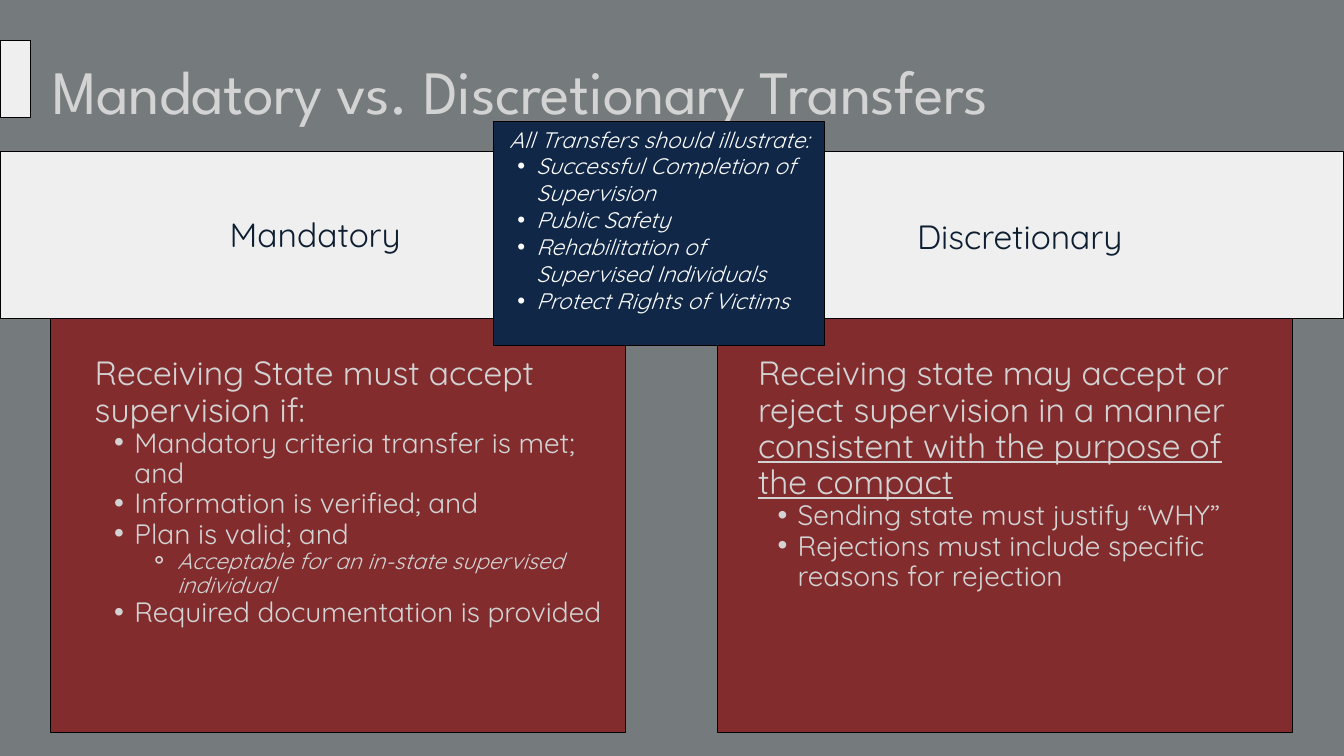
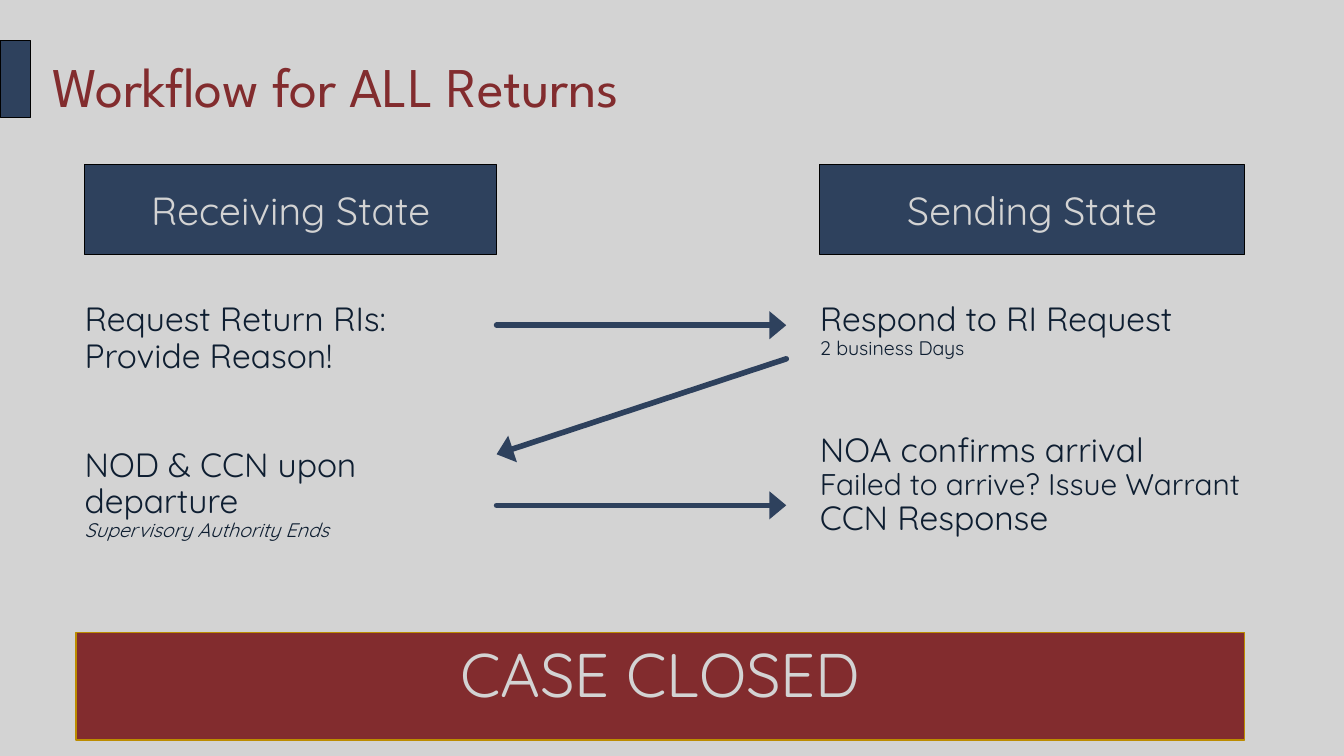
"""Build two slides on interstate transfers and the return workflow."""
from lxml.etree import SubElement
from pptx import Presentation
from pptx.dml.color import RGBColor as RGB
from pptx.enum.shapes import MSO_CONNECTOR as LINK, MSO_SHAPE as SHAPE
from pptx.enum.text import MSO_ANCHOR as ANCHOR, PP_ALIGN as ALIGN
from pptx.oxml.ns import qn
from pptx.util import Inches, Pt

COLOURS = {
    "slate": "757A7C", "silver": "D3D3D3", "mist": "EFEFEF", "brick": "822C2E",
    "navy": "102747", "steel": "2E415D", "ink": "0E1E31", "pale": "FCFCFB",
    "gold": "BC8C00", "black": "000000",
}
HEADING, BODY = "League Spartan", "Quicksand"
KINDS = {
    "title": {"size": 66, "leading": 71.3, "font": HEADING},
    "short title": {"size": 60, "leading": 64.8, "font": HEADING},
    "lead": {"size": 36, "leading": 38.9},
    "next lead": {"size": 36, "leading": 38.9, "gap": 77.8},
    "point": {"size": 30, "leading": 32.4, "level": 1, "indent": (0.59, -0.3), "bullet": "•"},
    "detail": {"size": 24, "leading": 25.9, "level": 2, "indent": (1.23, -0.41),
               "bullet": "⚬", "italic": True},
    "left band": {"size": 36, "leading": 43.2, "centred": True},
    "right band": {"size": 36, "leading": 38.9, "centred": True, "level": 1, "indent": (0.36, 0)},
    "goals": {"size": 24, "leading": 28.8, "centred": True, "italic": True},
    "goal": {"size": 24, "leading": 28.8, "level": 1, "indent": (0.57, -0.28),
             "bullet": "•", "italic": True},
    "state": {"size": 42, "leading": 50.4, "centred": True},
    "note": {"size": 21, "leading": 22.7},
    "italic note": {"size": 21, "leading": 22.7, "italic": True},
    "warning": {"size": 32, "leading": 34.6},
    "closing": {"size": 66, "leading": 79.2, "centred": True},
}

deck = Presentation()
deck.slide_width, deck.slide_height = Inches(20), Inches(11.25)
COL, ROW = deck.slide_width / 20, deck.slide_height / 11.25


def panel(slide, box, fill, edge="black", weight=1):
    left, top, width, height = box
    block = slide.shapes.add_shape(SHAPE.RECTANGLE, int(left * COL), int(top * ROW),
                                   int(width * COL), int(height * ROW))
    block.shadow.inherit = False
    block.fill.solid()
    block.fill.fore_color.rgb = RGB.from_string(COLOURS[fill])
    block.line.color.rgb = RGB.from_string(COLOURS[edge])
    block.line.width = Pt(weight)


def write(slide, box, colour, lines, anchor=ANCHOR.TOP, inset=0):
    left, top, width, height = box
    frame = slide.shapes.add_textbox(int(left * COL), int(top * ROW),
                                     int(width * COL), int(height * ROW)).text_frame
    layout = {"word_wrap": True, "vertical_anchor": anchor}
    layout.update({f"margin_{side}": Inches(inset) for side in ("left", "top", "right", "bottom")})
    for name, value in layout.items():
        setattr(frame, name, value)
    for number, (kind, *pieces) in enumerate(lines):
        look = KINDS[kind]
        line = frame.add_paragraph() if number else frame.paragraphs[0]
        spacing = {
            "alignment": ALIGN.CENTER if look.get("centred") else ALIGN.LEFT,
            "level": look.get("level", 0),
            "line_spacing": Pt(look["leading"]),
            "space_before": Pt(look.get("gap", 0)),
        }
        for name, value in spacing.items():
            setattr(line, name, value)
        props = line._p.get_or_add_pPr()
        for name, value in zip(("marL", "indent"), look.get("indent", (0, 0))):
            props.set(name, str(Inches(value)))
        if "bullet" in look:
            SubElement(props, qn("a:buFont"), typeface="Arial")
            SubElement(props, qn("a:buChar"), char=look["bullet"])
        for place, piece in enumerate(pieces):
            run = line.add_run()
            run.text = piece
            style = {"name": look.get("font", BODY), "size": Pt(look["size"]),
                     "italic": look.get("italic", False), "underline": place > 0}
            for name, value in style.items():
                setattr(run.font, name, value)
            run.font.color.rgb = RGB.from_string(COLOURS[colour])
            if look.get("font") == HEADING:
                run.font._element.set("spc", "-40")


slides = []
for ground, tab, colour, kind, title, height in (
    ("slate", "mist", "silver", "title", "Mandatory vs. Discretionary Transfers", 1.48),
    ("silver", "steel", "brick", "short title", "Workflow for ALL Returns", 1.33),
):
    slide = deck.slides.add_slide(deck.slide_layouts[6])
    slide.background.fill.solid()
    slide.background.fill.fore_color.rgb = RGB.from_string(COLOURS[ground])
    panel(slide, (0, 0.6, 0.45, 1.15), tab)
    write(slide, (0.78, 0.65, 18.47, height), colour, [(kind, title)], ANCHOR.MIDDLE)
    slides.append(slide)
transfers, returns = slides

mandatory = [
    ("lead", "Receiving State must accept supervision if:"),
    ("point", "Mandatory criteria transfer is met; and"),
    ("point", "Information is verified; and"),
    ("point", "Plan is valid; and"),
    ("detail", "Acceptable for an in-state supervised individual"),
    ("point", "Required documentation is provided"),
]
discretionary = [
    ("lead", "Receiving state may accept or reject supervision in a manner ",
     "consistent with the purpose of the compact"),
    ("point", "Sending state must justify “WHY”"),
    ("point", "Rejections must include specific reasons for rejection"),
]
panel(transfers, (0, 2.25, 20, 2.49), "mist")
for card_left, text_left, rules, height in (
    (0.75, 1.41, mandatory, 4.45), (10.68, 11.28, discretionary, 4),
):
    panel(transfers, (card_left, 4.74, 8.56, 6.16), "brick")
    write(transfers, (text_left, 5.3, 7.65, height), "silver", rules)
write(transfers, (3.1, 3.18, 3.18, 0.6), "ink", [("left band", "Mandatory")])
write(transfers, (13.1, 3.28, 3.79, 0.55), "ink", [("right band", "Discretionary")])

goals = (7.35, 1.81, 4.92, 3.33)
panel(transfers, goals, "navy")
write(transfers, goals, "pale", [
    ("goals", "All Transfers should illustrate:"),
    ("goal", "Successful Completion of Supervision"),
    ("goal", "Public Safety"),
    ("goal", "Rehabilitation of Supervised Individuals"),
    ("goal", "Protect Rights of Victims"),
], inset=0.06)

receiving = [
    ("lead", "Request Return RIs: Provide Reason!"),
    ("next lead", "NOD & CCN upon departure"),
    ("italic note", "Supervisory Authority Ends"),
]
sending = [
    ("lead", "Respond to RI Request"),
    ("note", "2 business Days"),
    ("next lead", "NOA confirms arrival"),
    ("warning", "Failed to arrive? Issue Warrant"),
    ("lead", "CCN Response"),
]
for state, left, width, steps, height in (
    ("Receiving State", 1.26, 6.13, receiving, 4.03),
    ("Sending State", 12.2, 6.32, sending, 3.45),
):
    panel(returns, (left, 2.45, width, 1.34), "steel")
    write(returns, (left, 2.63, width, 0.98), "silver", [("state", state)], ANCHOR.MIDDLE)
    write(returns, (left, 4.5, width, height), "ink", steps)

near, far = 7.39, 11.7
for start, start_row, end, end_row in (
    (near, 4.84, far, 4.84), (far, 5.34, near, 6.76), (near, 7.52, far, 7.52),
):
    arrow = returns.shapes.add_connector(LINK.STRAIGHT, int(start * COL), int(start_row * ROW),
                                         int(end * COL), int(end_row * ROW))
    arrow.line.color.rgb = RGB.from_string(COLOURS["steel"])
    arrow.line.width = Pt(6)
    stroke = arrow.line._get_or_add_ln()
    stroke.set("cap", "rnd")
    SubElement(stroke, qn("a:tailEnd"), type="triangle", w="lg", len="med")
    SubElement(arrow._element.spPr, qn("a:effectLst"))

closing = (1.13, 9.41, 17.39, 1.6)
panel(returns, closing, "brick", "gold", 1.5)
write(returns, closing, "silver", [("closing", "CASE CLOSED")], inset=0.06)

deck.save("out.pptx")
